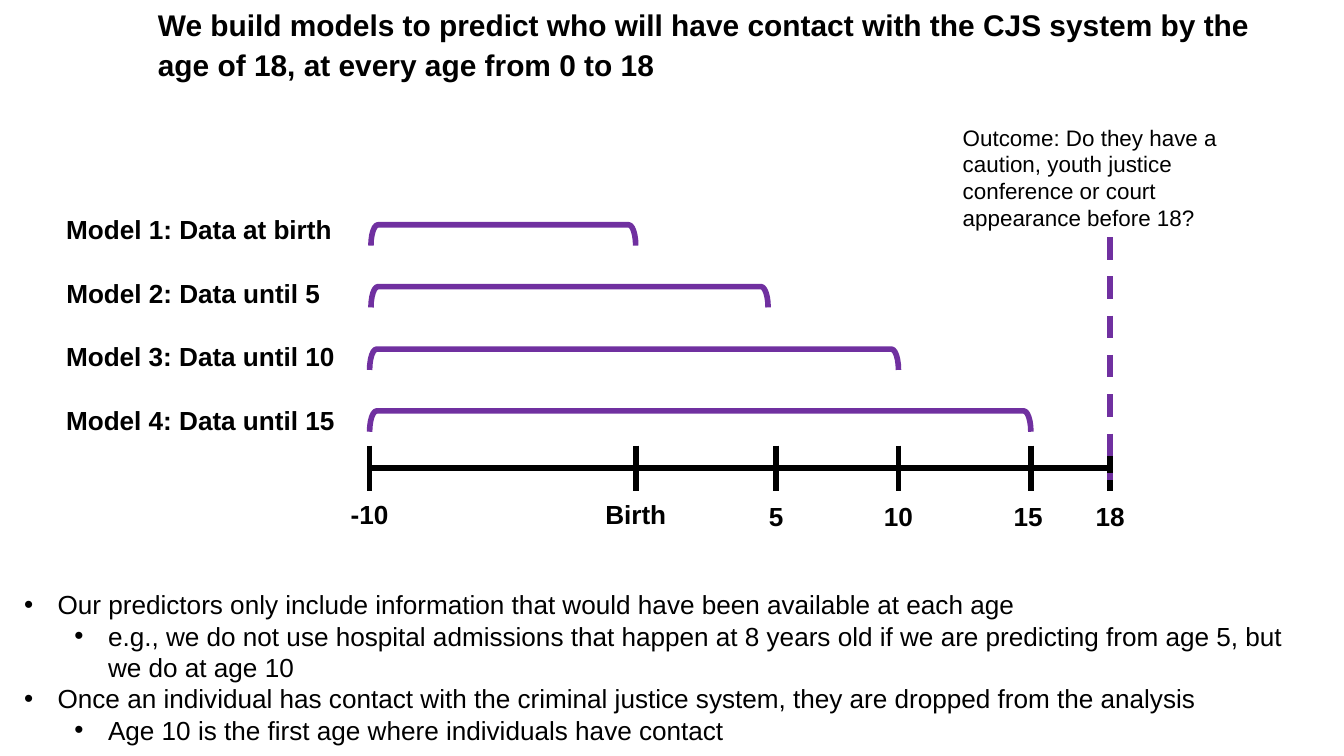
from typing import NamedTuple

from lxml import etree
from pptx import Presentation
from pptx import util as u
from pptx.dml.color import RGBColor
from pptx.enum import dml, shapes, text
from pptx.oxml.ns import qn

PX = 9144
BLACK, PURPLE = "000000", "7030A0"
START, BIRTH, FIVE, TEN, FIFTEEN, EIGHTEEN = 550, 946, 1155, 1337, 1534, 1652
AXIS_Y, TICK_TOP, TICK_BOTTOM = 696, 663, 730
BRACKET_DEPTH = 31


class Model(NamedTuple):
    label: str
    label_width: int
    end: int


class Age(NamedTuple):
    label: str
    x: int
    label_top: int


class Point(NamedTuple):
    wording: str
    level: int


MODELS = [
    Model("Model 1: Data at birth", 420, BIRTH),
    Model("Model 2: Data until 5", 403, 1143),
    Model("Model 3: Data until 10", 424, TEN),
    Model("Model 4: Data until 15", 424, FIFTEEN),
]
AGES = [
    Age("-10", START, 736),
    Age("Birth", BIRTH, 737),
    Age("5", FIVE, 740),
    Age("10", TEN, 740),
    Age("15", FIFTEEN, 740),
    Age("18", EIGHTEEN, 740),
]
POINTS = [
    Point("Our predictors only include information that would have been available at each age", 0),
    Point("e.g., we do not use hospital admissions that happen at 8 years old "
          "if we are predicting from age 5, but we do at age 10", 1),
    Point("Once an individual has contact with the criminal justice system, "
          "they are dropped from the analysis", 0),
    Point("Age 10 is the first age where individuals have contact", 1),
]


def px(length: float) -> int:
    return round(length * PX)


def color(value: str) -> RGBColor:
    return RGBColor.from_string(value)


def style(paragraph, size: int, bold: bool = False) -> None:
    font = paragraph.font
    font.name, font.size, font.bold = "Arial", u.Pt(size), bold
    font.color.rgb = color(BLACK)


def add_text(slide, wording: str, left: int, top: int, width: int, height: int,
             size: int, bold: bool = True, wrap: bool = True):
    frame = slide.shapes.add_textbox(px(left), px(top), px(width), px(height)).text_frame
    frame.word_wrap = wrap
    frame.text = wording
    style(frame.paragraphs[0], size, bold)
    return frame.paragraphs[0]


def add_label(slide, wording: str, left: int, top: int, width: int) -> None:
    label = add_text(slide, wording, left, top, width, 57, 28, wrap=False)
    label.alignment = text.PP_ALIGN.CENTER


def add_line(slide, x1: int, y1: int, x2: int, y2: int, hue: str = BLACK):
    line = slide.shapes.add_connector(
        shapes.MSO_CONNECTOR.STRAIGHT, px(x1), px(y1), px(x2), px(y2))
    line.line.color.rgb = color(hue)
    line.line.width = u.Pt(6)
    etree.SubElement(line._element.spPr, qn("a:effectLst"))
    return line


def add_bracket(slide, left: int, right: int, center_y: int) -> None:
    length = right - left
    bracket = slide.shapes.add_shape(
        shapes.MSO_SHAPE.LEFT_BRACKET,
        px((left + right - BRACKET_DEPTH) / 2), px(center_y - length / 2),
        px(BRACKET_DEPTH), px(length))
    bracket.rotation = 90
    bracket.adjustments[0] = 0.338
    bracket.shadow.inherit = False
    bracket.fill.background()
    bracket.line.color.rgb = color(PURPLE)
    bracket.line.width = u.Pt(6)


def add_outcome(slide) -> None:
    outcome = slide.shapes.add_shape(
        shapes.MSO_SHAPE.ROUNDED_RECTANGLE, px(1414), px(174), px(477), px(180))
    outcome.shadow.inherit = False
    outcome.fill.background()
    outcome.line.fill.background()
    frame = outcome.text_frame
    frame.word_wrap = True
    frame.vertical_anchor = text.MSO_ANCHOR.MIDDLE
    frame.text = ("Outcome: Do they have a caution, youth justice conference "
                  "or court appearance before 18?")
    frame.paragraphs[0].alignment = text.PP_ALIGN.LEFT
    style(frame.paragraphs[0], 24)


def add_points(slide) -> None:
    frame = slide.shapes.add_textbox(px(26), px(871), px(1947), px(246)).text_frame
    frame.word_wrap = True
    for index, point in enumerate(POINTS):
        paragraph = frame.paragraphs[0] if index == 0 else frame.add_paragraph()
        paragraph.text = point.wording
        paragraph.level = point.level
        style(paragraph, 28)
        properties = paragraph._p.get_or_add_pPr()
        properties.set("marL", str(px(50 + 75 * point.level)))
        properties.set("indent", str(px(-50)))
        bullet_font = etree.Element(qn("a:buFont"), typeface="Arial")
        bullet = etree.Element(qn("a:buChar"), char="•")
        properties.insert(0, bullet_font)
        bullet_font.addnext(bullet)


def main() -> None:
    deck = Presentation()
    deck.slide_width, deck.slide_height = px(2000), px(1125)
    slide = deck.slides.add_slide(deck.slide_layouts[6])

    title = add_text(
        slide, "We build models to predict who will have contact with the CJS system "
        "by the age of 18, at every age from 0 to 18", 225, 0, 1688, 100, 32)
    title.line_spacing = 1.1
    add_points(slide)
    add_outcome(slide)

    for row, model in enumerate(MODELS):
        add_label(slide, model.label, 86, 313 + round(94.6 * row), model.label_width)
        add_bracket(slide, START + (2 if row < 2 else 0), model.end, 350 + round(92.4 * row))

    add_line(slide, START, AXIS_Y, EIGHTEEN, AXIS_Y)
    for age in AGES:
        add_line(slide, age.x, TICK_TOP, age.x, TICK_BOTTOM)
        width = 112 if age.label == "Birth" else 20 + 22 * len(age.label)
        center = age.x - (4 if age.x == FIFTEEN else 0)
        add_label(slide, age.label, center - width // 2, age.label_top, width)

    cutoff = add_line(slide, EIGHTEEN, 353, EIGHTEEN, 714, PURPLE)
    cutoff.line.dash_style = dml.MSO_LINE.DASH

    deck.save("out.pptx")


if __name__ == "__main__":
    main()
